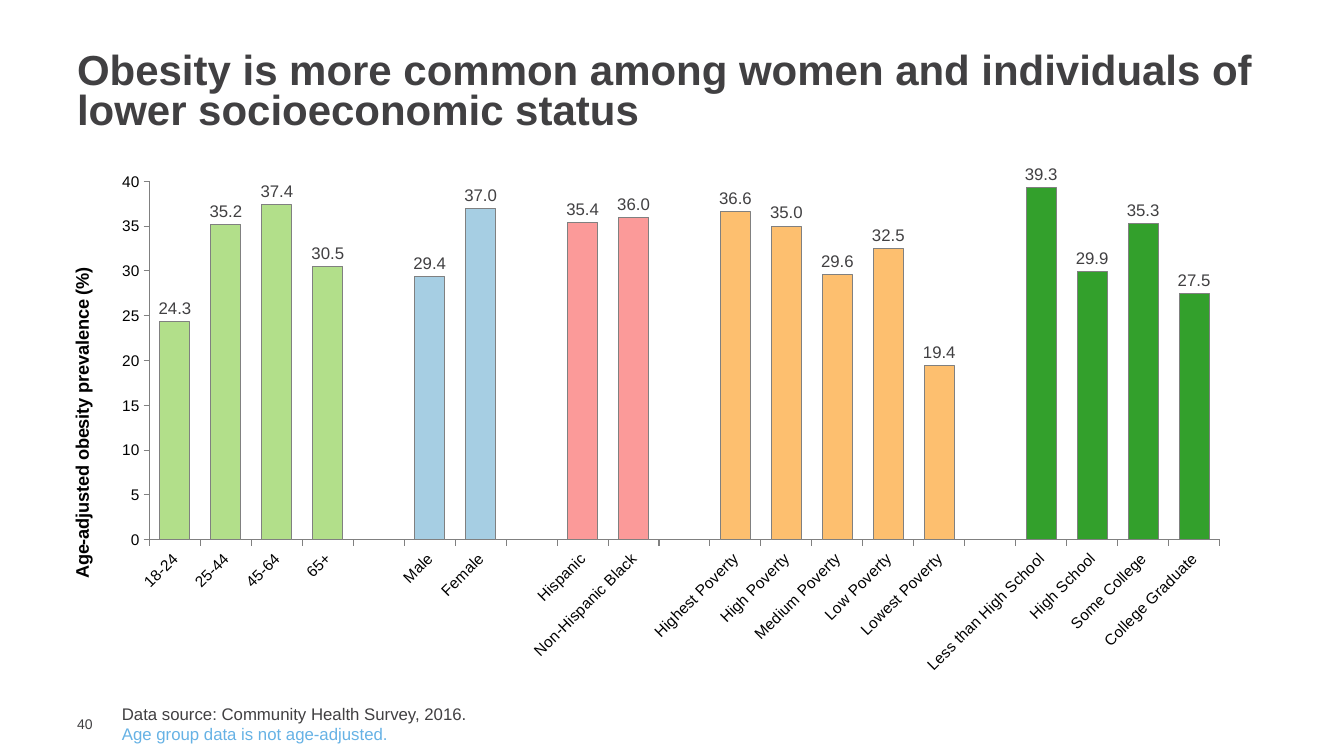
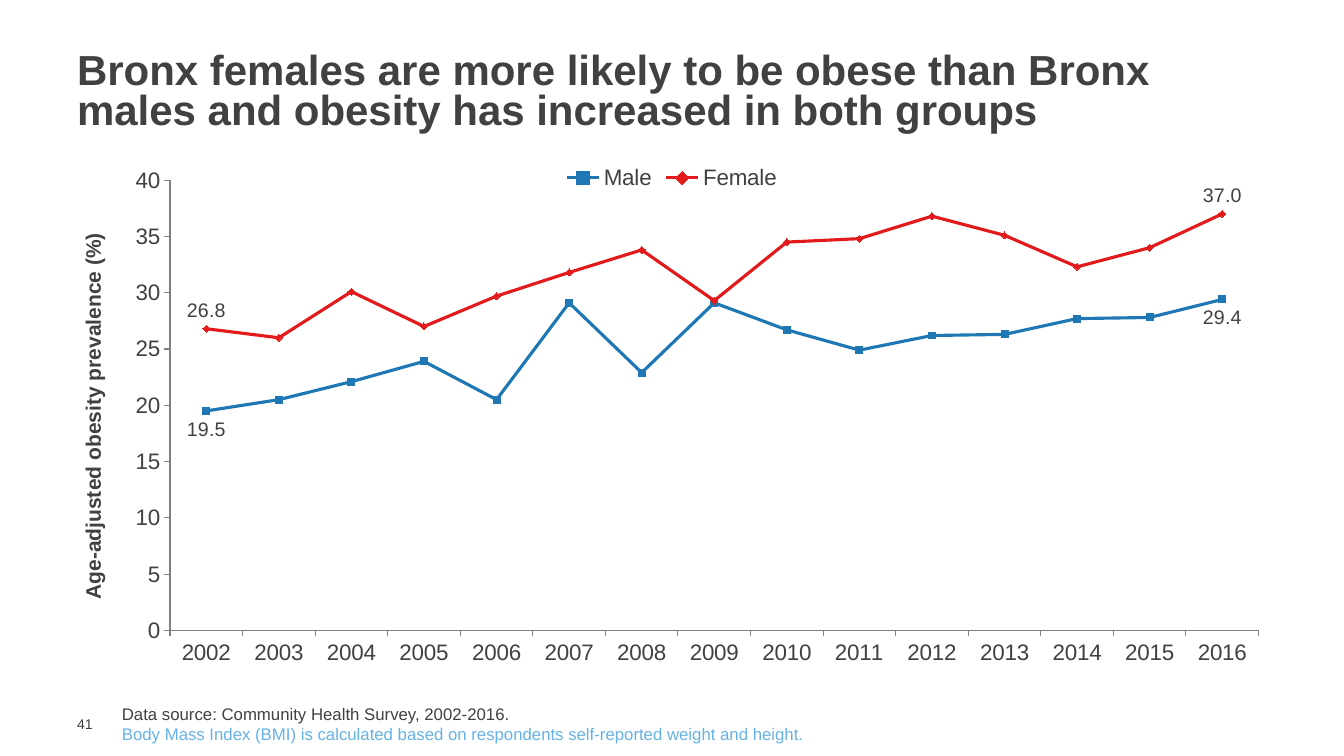
from dataclasses import dataclass

from lxml.etree import SubElement
from pptx import Presentation
from pptx.chart.data import CategoryChartData
from pptx.dml.color import RGBColor
from pptx.enum.chart import (XL_CHART_TYPE, XL_LABEL_POSITION, XL_LEGEND_POSITION,
                             XL_MARKER_STYLE, XL_TICK_MARK)
from pptx.enum.text import MSO_ANCHOR
from pptx.oxml.ns import qn
from pptx.util import Pt


@dataclass(frozen=True)
class Theme:
    face: str = "Arial"
    ink: RGBColor = RGBColor(0x41, 0x40, 0x42)
    note: RGBColor = RGBColor(0x66, 0xB2, 0xE5)
    black: RGBColor = RGBColor(0, 0, 0)
    rule: RGBColor = RGBColor(0x80, 0x80, 0x80)
    lime: RGBColor = RGBColor(0xB2, 0xDF, 0x8A)
    sky: RGBColor = RGBColor(0xA6, 0xCE, 0xE3)
    pink: RGBColor = RGBColor(0xFB, 0x9A, 0x99)
    amber: RGBColor = RGBColor(0xFD, 0xBF, 0x6F)
    green: RGBColor = RGBColor(0x33, 0xA0, 0x2C)
    blue: RGBColor = RGBColor(0x1F, 0x78, 0xB4)
    red: RGBColor = RGBColor(0xE3, 0x1A, 0x1C)
    head: float = 30
    foot: float = 12
    page: float = 10
    thin: float = 0.75
    thick: float = 2.25


theme = Theme()


def write(slide, text, *, box, size, colors=(theme.ink,), bold=False,
          space=None, anchor=MSO_ANCHOR.TOP, inset=None):
    """Add a text box; each line of text takes the next of the colors."""
    frame = slide.shapes.add_textbox(*map(Pt, box)).text_frame
    frame.word_wrap = True
    frame.vertical_anchor = anchor
    if inset:
        (frame.margin_left, frame.margin_top,
         frame.margin_right, frame.margin_bottom) = map(Pt, inset)
    frame.text = text
    for para, color in zip(frame.paragraphs, colors):
        if space:
            para.line_spacing = space
        font = para.font
        font.name, font.size, font.bold = theme.face, Pt(size), bold
        font.color.rgb = color


def plot(slide, kind, data, *, box, area, size, label, color):
    """Add a chart with the shared axes; area is the inner plot as fractions."""
    chart = slide.shapes.add_chart(kind, *map(Pt, box), data).chart
    chart.has_title = chart.has_legend = False
    chart.font.name, chart.font.size = theme.face, Pt(size)
    chart.font.color.rgb = theme.ink

    across, up = chart.category_axis, chart.value_axis
    for axis in (across, up):
        axis.has_major_gridlines = False
        axis.major_tick_mark = XL_TICK_MARK.OUTSIDE
        axis.minor_tick_mark = XL_TICK_MARK.NONE
        axis.format.line.color.rgb = theme.rule
        axis.format.line.width = Pt(theme.thin)
        font = axis.tick_labels.font
        font.name, font.size = theme.face, Pt(size)
        font.color.rgb = color
    up.minimum_scale, up.maximum_scale, up.major_unit = 0, 40, 5
    up.tick_labels.number_format = "General"
    up.tick_labels.number_format_is_linked = False

    frame = up.axis_title.text_frame
    frame.text = "Age-adjusted obesity prevalence (%)"
    font = frame.paragraphs[0].runs[0].font
    font.name, font.size, font.bold = theme.face, Pt(label), True
    font.color.rgb = color
    turn = frame._txBody.bodyPr
    turn.set("rot", "-5400000")
    turn.set("vert", "horz")

    inner = chart._chartSpace.chart.plotArea
    for old in inner.findall(qn("c:layout")):
        inner.remove(old)
    layout = SubElement(inner, qn("c:layout"))
    inner.insert(0, layout)
    manual = SubElement(layout, qn("c:manualLayout"))
    tags = ("layoutTarget", "xMode", "yMode", "x", "y", "w", "h")
    for tag, val in zip(tags, ("inner", "edge", "edge", *area)):
        SubElement(manual, qn("c:" + tag)).set("val", str(val))
    return chart


deck = Presentation()
deck.slide_width, deck.slide_height = Pt(960), Pt(540)

# Title, page number and source note
pages = [
    (40, "Obesity is more common among women and individuals of lower socioeconomic status",
     "Data source: Community Health Survey, 2016.\n"
     "Age group data is not age-adjusted."),
    (41, "Bronx females are more likely to be obese than Bronx males "
     "and obesity has increased in both groups",
     "Data source: Community Health Survey, 2002-2016.\n"
     "Body Mass Index (BMI) is calculated based on respondents "
     "self-reported weight and height."),
]
for page, title, source in pages:
    slide = deck.slides.add_slide(deck.slide_layouts[6])
    write(slide, str(page), box=(48, 511, 31, 12), size=theme.page,
          anchor=MSO_ANCHOR.MIDDLE, inset=(7.2, 0, 0, 0))
    write(slide, title, box=(48, 34, 864, 65.5), size=theme.head, bold=True,
          space=0.8, anchor=MSO_ANCHOR.MIDDLE)
    write(slide, source, box=(80, 499, 699, 36), size=theme.foot,
          colors=(theme.ink, theme.note))
first, second = deck.slides

# Prevalence by group, with an empty category between groups
groups = [
    (theme.lime, {"18-24": 24.3, "25-44": 35.2, "45-64": 37.4, "65+": 30.5}),
    (theme.sky, {"Male": 29.4, "Female": 37}),
    (theme.pink, {"Hispanic": 35.4, "Non-Hispanic Black": 36}),
    (theme.amber, {"Highest Poverty": 36.6, "High Poverty": 35, "Medium Poverty": 29.6,
                   "Low Poverty": 32.5, "Lowest Poverty": 19.4}),
    (theme.green, {"Less than High School": 39.3, "High School": 29.9,
                   "Some College": 35.3, "College Graduate": 27.5}),
]
bars = []
for color, rates in groups:
    if bars:
        bars.append(("", None, None))
    bars += [(name, rate, color) for name, rate in rates.items()]

data = CategoryChartData(number_format="#,##0.0")
data.categories = [name for name, _, _ in bars]
data.add_series("Series 1", [rate for _, rate, _ in bars])
chart = plot(first, XL_CHART_TYPE.COLUMN_CLUSTERED, data, box=(48, 114, 840, 388),
             area=(0.07, 0.04, 0.91, 0.66), size=11, label=13, color=theme.black)
chart.category_axis._element.txPr.bodyPr.set("rot", "-2700000")
group = chart.plots[0]
group.gap_width, group.overlap, group.vary_by_categories = 70, -27, False
series = group.series[0]
series.invert_if_negative = False
for spot, (_, _, color) in enumerate(bars):
    if color:
        shape = series.points[spot].format
        shape.fill.solid()
        shape.fill.fore_color.rgb = color
        shape.line.color.rgb = theme.rule
        shape.line.width = Pt(theme.thin)
labels = series.data_labels
labels.show_value = True
labels.position = XL_LABEL_POSITION.OUTSIDE_END
labels.number_format, labels.number_format_is_linked = "#,##0.0", False
labels.font.name, labels.font.size = theme.face, Pt(12)
labels.font.color.rgb = theme.ink

# Trend by sex, with only the first and last years labelled
trends = [
    ("Male", theme.blue, XL_MARKER_STYLE.SQUARE, XL_LABEL_POSITION.BELOW,
     (19.5, 20.5, 22.1, 23.9, 20.5, 29.1, 22.9, 29.1,
      26.7, 24.9, 26.2, 26.3, 27.7, 27.8, 29.4)),
    ("Female", theme.red, XL_MARKER_STYLE.DIAMOND, XL_LABEL_POSITION.ABOVE,
     (26.8, 26, 30.1, 27, 29.7, 31.8, 33.8, 29.3,
      34.5, 34.8, 36.8, 35.1, 32.3, 34, 37)),
]
data = CategoryChartData(number_format="#,##0.0")
data.categories = [str(year) for year in range(2002, 2017)]
for name, _, _, _, rates in trends:
    data.add_series(name, rates)
chart = plot(second, XL_CHART_TYPE.LINE_MARKERS, data, box=(48, 110, 864, 374),
             area=(0.085, 0.05, 0.9, 0.86), size=16, label=15, color=theme.ink)
chart.has_legend = True
chart.legend.position = XL_LEGEND_POSITION.TOP
chart.legend.include_in_layout = False
chart.legend.font.name, chart.legend.font.size = theme.face, Pt(16)
chart.legend.font.color.rgb = theme.ink
chart.plots[0].vary_by_categories = False
for series, (_, color, mark, side, rates) in zip(chart.plots[0].series, trends):
    series.smooth = False
    series.format.line.color.rgb = color
    series.format.line.width = Pt(theme.thick)
    series.marker.style, series.marker.size = mark, 5
    series.marker.format.fill.solid()
    series.marker.format.fill.fore_color.rgb = color
    series.marker.format.line.color.rgb = color
    series.data_labels.show_value = False
    for spot in (0, len(rates) - 1):
        label = series.points[spot].data_label
        label.position = side
        label.font.name, label.font.size = theme.face, Pt(14)
        label.font.color.rgb = theme.ink

deck.save("out.pptx")
